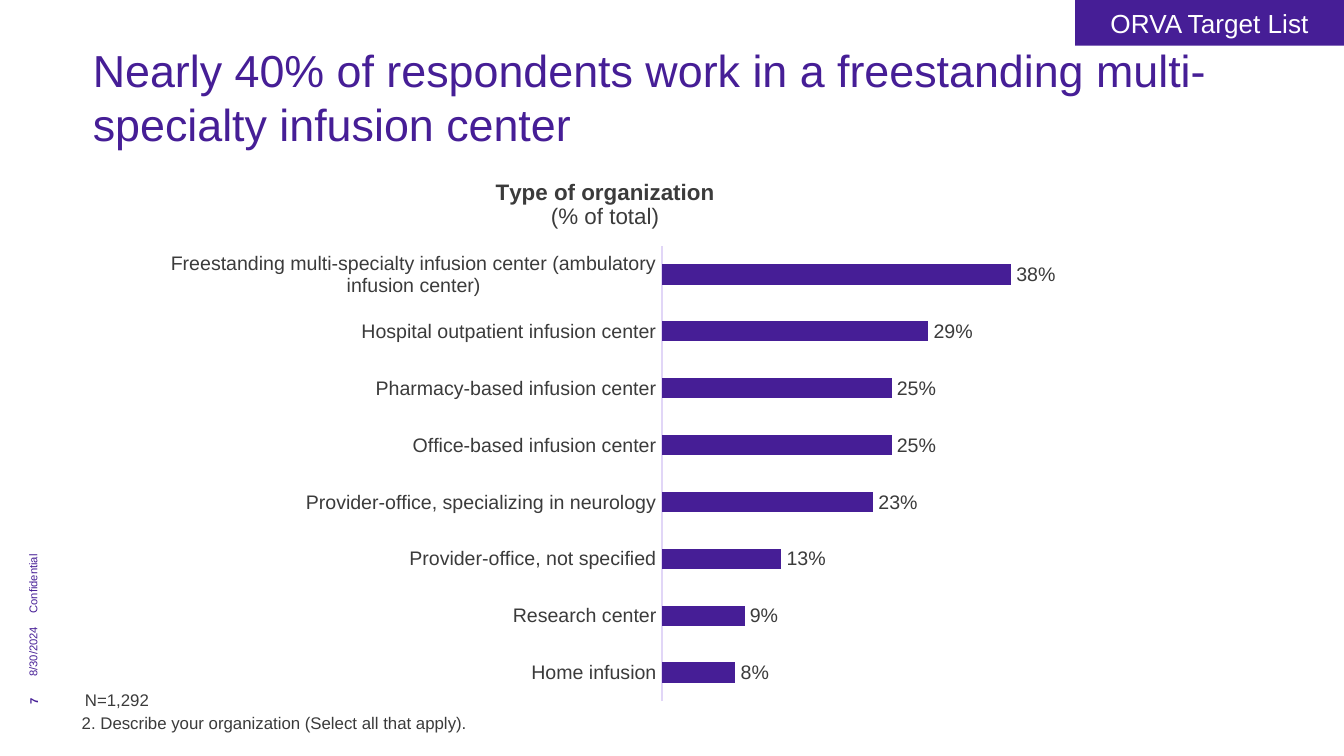
from lxml import etree
from pptx import Presentation
from pptx.chart.data import CategoryChartData
from pptx.dml.color import RGBColor
from pptx.enum.chart import XL_CHART_TYPE as ChartType, XL_LABEL_POSITION as LabelPos
from pptx.enum.chart import XL_TICK_LABEL_POSITION as TickLabelPos, XL_TICK_MARK as TickMark
from pptx.enum.shapes import MSO_SHAPE as Shape
from pptx.enum.text import MSO_ANCHOR as Anchor, MSO_AUTO_SIZE as AutoSize, PP_ALIGN as Align
from pptx.oxml.ns import qn
from pptx.util import Inches, Pt

PURPLE = RGBColor(0x46, 0x1E, 0x96)
LILAC = RGBColor(0xE1, 0xD6, 0xF7)
GRAY = RGBColor(0x3B, 0x3B, 0x3B)
WHITE = RGBColor(0xFF, 0xFF, 0xFF)

ORGANIZATIONS = {
    "Freestanding multi-specialty infusion center (ambulatory infusion center)": 0.38,
    "Hospital outpatient infusion center": 0.29,
    "Pharmacy-based infusion center": 0.25,
    "Office-based infusion center": 0.25,
    "Provider-office, specializing in neurology": 0.23,
    "Provider-office, not specified": 0.13,
    "Research center": 0.09,
    "Home infusion": 0.08,
}


def style_font(font, size, color, bold=False):
    font.name = "Arial"
    font.size = Pt(size)
    font.bold = bold
    font.color.rgb = color


def write(frame, text, size=9, color=GRAY, bold=False, align=Align.LEFT,
          anchor=Anchor.MIDDLE, inset=None):
    frame.word_wrap = True
    frame.auto_size = AutoSize.NONE
    frame.vertical_anchor = anchor
    if inset is not None:
        frame.margin_left = frame.margin_right = Inches(inset)
        frame.margin_top = frame.margin_bottom = Inches(inset)
    paragraph = frame.paragraphs[0]
    paragraph.alignment = align
    run = paragraph.add_run()
    run.text = text
    style_font(run.font, size, color, bold)


def place(element, **fractions):
    """Give a chart element a manual layout in fractions of the chart."""
    layout = element.find(qn("c:layout"))
    if layout is None:
        layout = etree.Element(qn("c:layout"))
        text = element.find(qn("c:tx"))
        element.insert(0 if text is None else 1, layout)
    for child in list(layout):
        layout.remove(child)
    manual = etree.SubElement(layout, qn("c:manualLayout"))
    if "w" in fractions:
        etree.SubElement(manual, qn("c:layoutTarget")).set("val", "inner")
    for side in ("x", "y"):
        etree.SubElement(manual, qn(f"c:{side}Mode")).set("val", "edge")
    for side, value in fractions.items():
        etree.SubElement(manual, qn(f"c:{side}")).set("val", str(value))


class SurveySlide:
    def __init__(self, deck):
        self.slide = deck.slides.add_slide(deck.slide_layouts[5])
        self.shapes = self.slide.shapes

    def title(self, text, left, top, width, height):
        heading = self.shapes.title
        heading.left, heading.top = Inches(left), Inches(top)
        heading.width, heading.height = Inches(width), Inches(height)
        write(heading.text_frame, text, size=24, color=PURPLE, anchor=Anchor.TOP, inset=0)

    def text(self, text, left, top, width, height, rotation=0, **style):
        box = self.shapes.add_textbox(Inches(left), Inches(top), Inches(width), Inches(height))
        box.rotation = rotation
        write(box.text_frame, text, **style)

    def tab(self, text, left, top, width, height):
        tab = self.shapes.add_shape(Shape.RECTANGLE, Inches(left), Inches(top),
                                    Inches(width), Inches(height))
        tab.shadow.inherit = False
        tab.fill.solid()
        tab.fill.fore_color.rgb = PURPLE
        tab.line.fill.background()
        write(tab.text_frame, text, size=14, color=WHITE, align=Align.CENTER)

    def bar_chart(self, heading, unit, shares, left, top, width, height):
        data = CategoryChartData(number_format="0%")
        data.categories = list(shares)
        data.add_series("Series 1", list(shares.values()))
        chart = self.shapes.add_chart(ChartType.BAR_CLUSTERED, Inches(left), Inches(top),
                                      Inches(width), Inches(height), data).chart
        style_font(chart.font, 10, PURPLE)
        chart.has_legend = False

        # Two-line chart title
        title_frame = chart.chart_title.text_frame
        lines = [title_frame.paragraphs[0], title_frame.add_paragraph()]
        for line, words, bold in zip(lines, (heading, unit), (True, False)):
            run = line.add_run()
            run.text = words
            style_font(run.font, 12, GRAY, bold)
        chart.chart_title.include_in_layout = False
        place(chart.chart_title._element, x=0.37, y=0.03)

        # Axes
        categories = chart.category_axis
        categories.reverse_order = True
        categories.major_tick_mark = categories.minor_tick_mark = TickMark.NONE
        categories.tick_label_position = TickLabelPos.NEXT_TO_AXIS
        categories.format.line.color.rgb = LILAC
        categories.format.line.width = Pt(0.75)
        style_font(categories.tick_labels.font, 10.5, GRAY)
        values = chart.value_axis
        values.visible = False
        values.has_major_gridlines = False
        values.minimum_scale, values.maximum_scale = 0, 0.4

        # Bars and their labels
        plot = chart.plots[0]
        plot.gap_width = 182
        plot.vary_by_categories = False
        bars = plot.series[0]
        bars.format.fill.solid()
        bars.format.fill.fore_color.rgb = PURPLE
        labels = bars.data_labels
        labels.show_value = True
        labels.number_format = "0%"
        labels.number_format_is_linked = False
        labels.position = LabelPos.OUTSIDE_END
        style_font(labels.font, 10.5, GRAY)
        place(chart._chartSpace.chart.plotArea, x=0.56, y=0.16, w=0.41, h=0.82)


def main():
    deck = Presentation()
    deck.slide_width, deck.slide_height = Inches(10), Inches(10 * 9 / 16)
    page = SurveySlide(deck)

    page.title("Nearly 40% of respondents work in a freestanding multi-specialty infusion center",
               0.69, 0.32, 9.02, 0.43)

    # Vertical footer, read from bottom to top
    footer = dict(rotation=270, size=6, color=PURPLE, anchor=Anchor.TOP, inset=0)
    page.text("8/30/2024", 0.02, 4.74, 0.47, 0.12, **footer)
    page.text("Confidential", -0.7, 3.55, 1.91, 0.12, **footer)
    page.text("7", 0.16, 5.08, 0.2, 0.12, bold=True, **footer)

    page.bar_chart("Type of organization", "(% of total)", ORGANIZATIONS,
                   1.19, 1.17, 6.67, 4.13)

    # Survey question, list tab and sample size
    page.text("2. Describe your organization (Select all that apply).", 0.51, 5.25, 5, 0.25)
    page.tab("ORVA Target List", 8, 0, 2, 0.34)
    page.text("N=1,292", 0.36, 5.13, 1.02, 0.22, align=Align.CENTER,
              anchor=Anchor.TOP, inset=0)

    deck.save("out.pptx")


if __name__ == "__main__":
    main()
